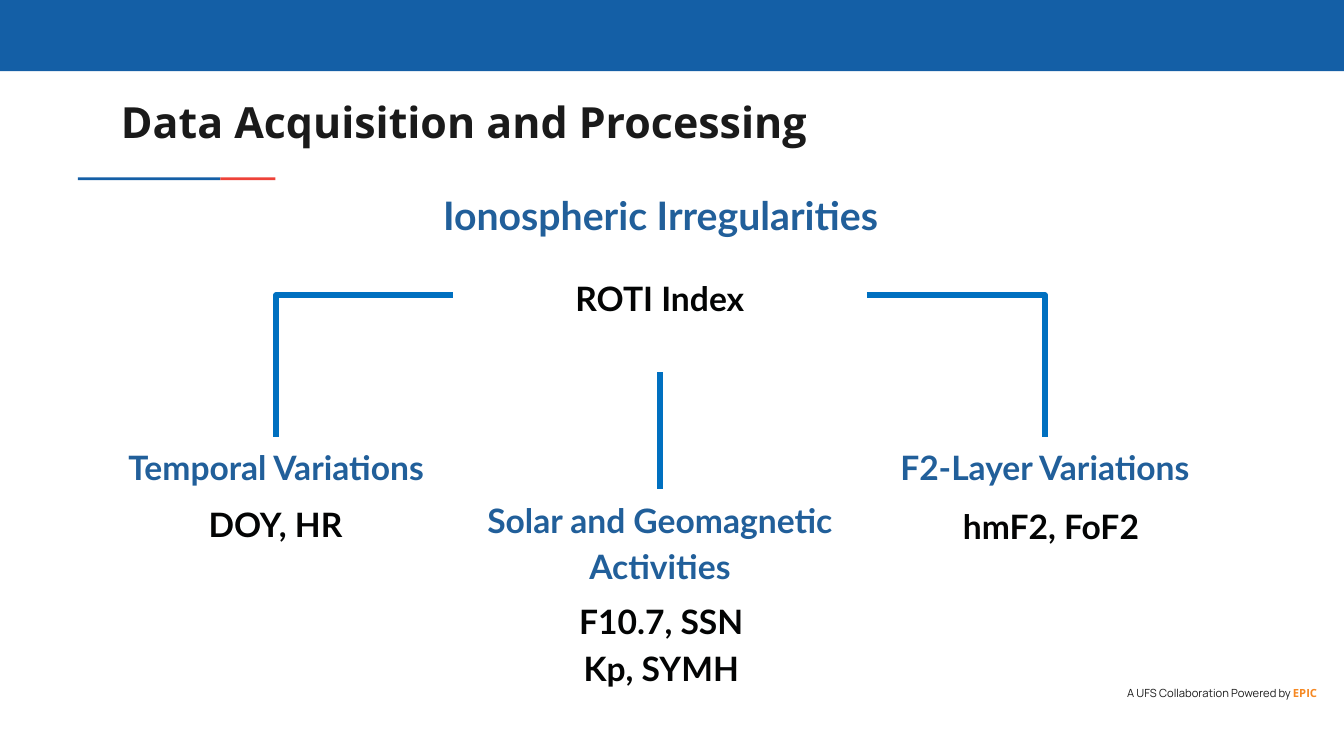
from dataclasses import dataclass

from lxml import etree
from pptx import Presentation
from pptx.dml.color import RGBColor
from pptx.enum.shapes import MSO_CONNECTOR, MSO_SHAPE
from pptx.enum.text import MSO_ANCHOR, MSO_AUTO_SIZE, PP_ALIGN
from pptx.oxml.ns import qn
from pptx.util import Inches, Pt

STRAIGHT, ELBOW = MSO_CONNECTOR.STRAIGHT, MSO_CONNECTOR.ELBOW
RECTANGLE = MSO_SHAPE.RECTANGLE
TOP, MIDDLE = MSO_ANCHOR.TOP, MSO_ANCHOR.MIDDLE
LEFT, CENTER, RIGHT = PP_ALIGN.LEFT, PP_ALIGN.CENTER, PP_ALIGN.RIGHT
NO_AUTOFIT = MSO_AUTO_SIZE.NONE
TOP_SIDE, LEFT_SIDE, RIGHT_SIDE = 0, 1, 3
SLIDE_WIDTH = 10

COLORS = {
    "band": "145FA6",
    "accent": "EE4238",
    "ink": "1A1A1A",
    "orange": "F68822",
    "heading": "215F9A",
    "detail": "030404",
    "branch": "0070C0",
}


@dataclass
class Bar:
    left: float
    top: float
    width: float
    height: float
    color: str


@dataclass
class Label:
    left: float
    top: float
    width: float
    height: float
    lines: tuple
    color: str
    size: int = 18


BARS = (
    Bar(0, 0, SLIDE_WIDTH, 0.53, "band"),
    Bar(0.58, 1.32, 1.06, 0.02, "band"),
    Bar(1.64, 1.32, 0.41, 0.02, "accent"),
)

LABELS = {
    "irregularities": Label(3.06, 1.37, 3.71, 0.41, ("Ionospheric Irregularities",), "heading", 21),
    "roti": Label(3.37, 1.86, 3.08, 0.67, ("ROTI Index",), "detail"),
    "temporal": Label(0.69, 3.25, 2.73, 0.4, ("Temporal Variations",), "heading"),
    "f2_layer": Label(6.41, 3.25, 2.73, 0.4, ("F2-Layer Variations",), "heading"),
    "solar": Label(3.37, 3.82, 3.08, 0.4, ("Solar and Geomagnetic", "Activities"), "heading"),
    "temporal_inputs": Label(0.51, 3.54, 3.08, 0.67, ("DOY, HR",), "detail"),
    "solar_inputs": Label(3.38, 4.44, 3.08, 0.67, ("F10.7, SSN", "Kp, SYMH"), "detail"),
    "f2_inputs": Label(6.28, 3.56, 3.08, 0.67, ("hmF2, FoF2",), "detail"),
}


def rgb(name: str) -> RGBColor:
    return RGBColor.from_string(COLORS[name])


def add_run(paragraph, text: str, font: str, size: float, color: str, bold: bool = True) -> None:
    run = paragraph.add_run()
    run.text = text
    run.font.name = font
    run.font.size = Pt(size)
    run.font.bold = bold
    run.font.color.rgb = rgb(color)


def set_frame(frame, anchor, inset: float) -> None:
    frame.word_wrap = True
    frame.auto_size = NO_AUTOFIT
    frame.vertical_anchor = anchor
    frame.margin_left = frame.margin_right = Inches(inset)
    frame.margin_top = frame.margin_bottom = Inches(inset)


def add_bar(slide, bar: Bar) -> None:
    shape = slide.shapes.add_shape(
        RECTANGLE, Inches(bar.left), Inches(bar.top), Inches(bar.width), Inches(bar.height))
    shape.shadow.inherit = False
    shape.fill.solid()
    shape.fill.fore_color.rgb = rgb(bar.color)
    shape.line.fill.background()


def add_label(slide, label: Label):
    box = slide.shapes.add_textbox(
        Inches(label.left), Inches(label.top), Inches(label.width), Inches(label.height))
    frame = box.text_frame
    set_frame(frame, MIDDLE, 0.1)
    for index, line in enumerate(label.lines):
        paragraph = frame.add_paragraph() if index else frame.paragraphs[0]
        paragraph.alignment = CENTER
        paragraph.line_spacing = 1.15
        add_run(paragraph, line, "Lato", label.size, label.color)
    return box


def add_branch(slide, kind, start: tuple, end: tuple):
    branch = slide.shapes.add_connector(kind, *map(Inches, start + end))
    branch.line.color.rgb = rgb("branch")
    branch.line.width = Pt(3)
    etree.SubElement(branch._element.spPr, qn("a:effectLst"))
    return branch


def add_corner_branch(slide, source, side: int, target) -> None:
    branch = add_branch(slide, ELBOW, (0, 0), (1, 1))
    branch._element.spPr.find(qn("a:prstGeom")).set("prst", "bentConnector2")
    branch.begin_connect(source, side)
    branch.end_connect(target, TOP_SIDE)


def add_title(slide, text: str) -> None:
    title = slide.shapes.title
    title.left, title.top = Inches(0.8), Inches(0.61)
    title.width, title.height = Inches(8.41), Inches(0.59)
    set_frame(title.text_frame, TOP, 0.1)
    paragraph = title.text_frame.paragraphs[0]
    paragraph.alignment = LEFT
    add_run(paragraph, text, "Open Sans", 23, "ink")


def add_footer(slide) -> None:
    footer = slide.shapes.add_textbox(Inches(7.81), Inches(5.11), Inches(1.99), Inches(0.1))
    set_frame(footer.text_frame, TOP, 0)
    paragraph = footer.text_frame.paragraphs[0]
    paragraph.alignment = RIGHT
    add_run(paragraph, "A UFS Collaboration Powered by ", "Manrope", 6, "ink", bold=False)
    add_run(paragraph, "EPIC", "Open Sans", 6, "orange")


def main() -> None:
    deck = Presentation()
    deck.slide_width = Inches(SLIDE_WIDTH)
    deck.slide_height = Inches(SLIDE_WIDTH * 9 / 16)
    slide = deck.slides.add_slide(deck.slide_layouts[5])

    # Header band, title and its underline
    for bar in BARS:
        add_bar(slide, bar)
    add_title(slide, "Data Acquisition and Processing")

    # Tree of target index and input groups
    boxes = {name: add_label(slide, label) for name, label in LABELS.items()}
    add_corner_branch(slide, boxes["roti"], LEFT_SIDE, boxes["temporal"])
    add_corner_branch(slide, boxes["roti"], RIGHT_SIDE, boxes["f2_layer"])
    add_branch(slide, STRAIGHT, (4.91, 2.77), (4.91, 3.64))

    # Footer
    add_footer(slide)
    deck.save("out.pptx")


if __name__ == "__main__":
    main()
